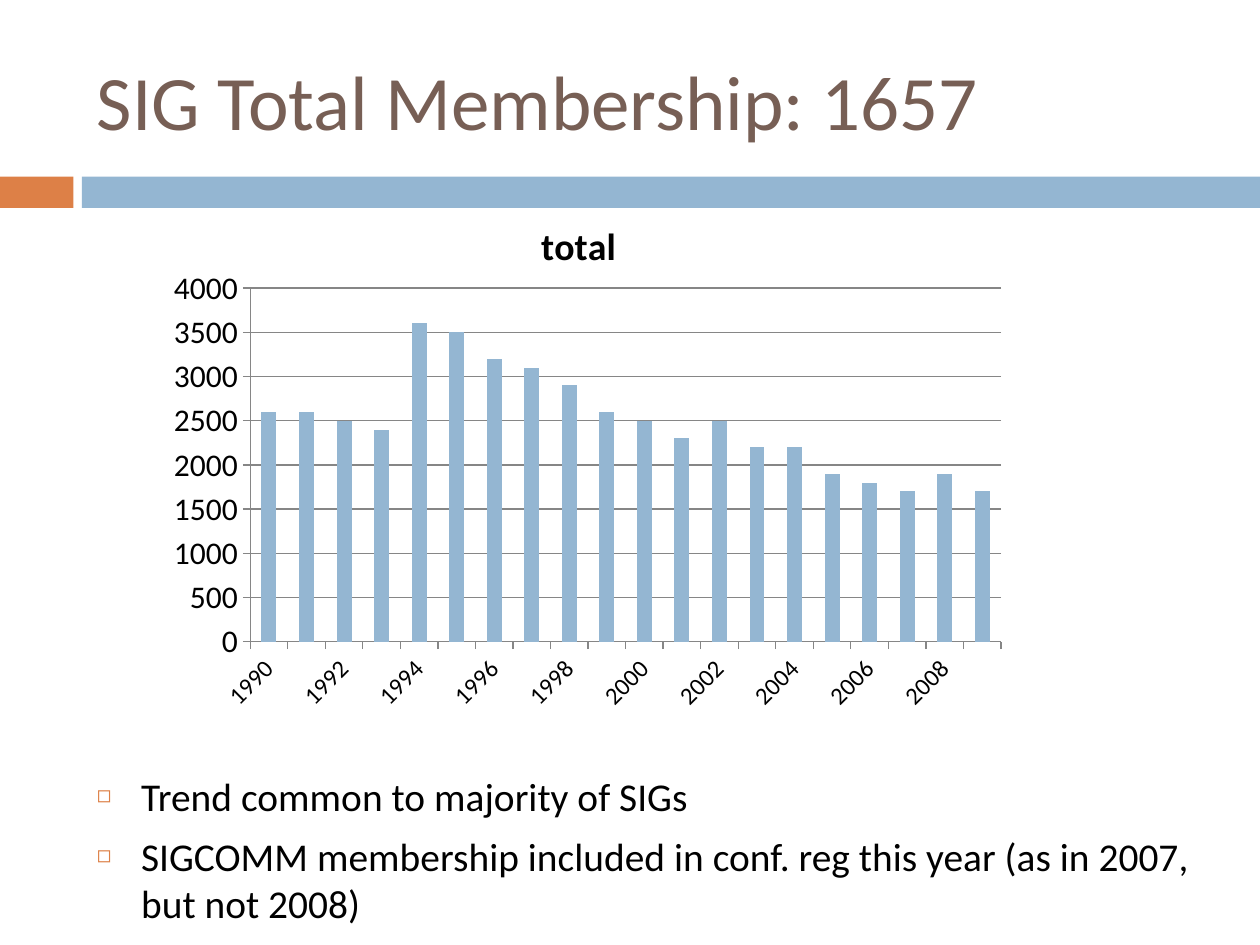
import pptx
import pptx.chart.data
import pptx.dml.color
import pptx.enum.chart
import pptx.enum.shapes
import pptx.enum.text
import pptx.oxml
import pptx.oxml.ns
import pptx.util
from dataclasses import dataclass

Cm, Pt = pptx.util.Cm, pptx.util.Pt

TITLE = "SIG Total Membership: 1657"
BULLETS = [
    "Trend common to majority of SIGs",
    "SIGCOMM membership included in conf. reg this year (as in 2007, but not 2008)",
]
SERIES = "total"
FIRST_YEAR = 1990
MEMBERS = [2600, 2600, 2500, 2400, 3600, 3500, 3200, 3100, 2900, 2600,
           2500, 2300, 2500, 2200, 2200, 1900, 1800, 1700, 1900, 1700]
PLOT = {"x": 0.151, "y": 0.152, "w": 0.798, "h": 0.565}


@dataclass
class Theme:
    font: str = "Calibri"
    title: str = "775F55"
    text: str = "000000"
    accent: str = "DD8047"
    bar: str = "94B6D2"
    grid: str = "868686"
    title_pt: float = 44
    body_pt: float = 22.5
    chart_title_pt: float = 21.6
    chart_pt: float = 18
    years_pt: float = 14


theme = Theme()
SLIDE_W, SLIDE_H = 25.4, 19.05
TEXT_LEFT, TEXT_W = 1.7, 22.66
BAND_TOP, BAND_H = 3.56, 0.63
TAB_W, BAND_LEFT = 1.48, 1.65


def rgb(value):
    return pptx.dml.color.RGBColor.from_string(value)


def xml(tag, content="", attrs=""):
    ns = pptx.oxml.ns.nsdecls("a", "c")
    return pptx.oxml.parse_xml(f"<{tag} {ns} {attrs}>{content}</{tag}>")


def style(font, size, color=theme.text, bold=False):
    font.name, font.size, font.bold = theme.font, Pt(size), bold
    font.color.rgb = rgb(color)


def write(p, text, size, color=theme.text, before=0, bullet=None):
    p.alignment = pptx.enum.text.PP_ALIGN.LEFT
    p.space_before = Pt(before)
    p.line_spacing = 1.0
    r = p.add_run()
    r.text = text
    style(r.font, size, color)
    if bullet:
        pPr = p._p.get_or_add_pPr()
        indent = Cm(0.89)
        pPr.set("marL", str(indent))
        pPr.set("indent", str(-indent))
        pPr.append(xml("a:buClr", f'<a:srgbClr val="{theme.accent}"/>'))
        pPr.append(xml("a:buSzPct", attrs='val="60000"'))
        pPr.append(xml("a:buChar", attrs=f'char="{bullet}"'))


def place(sp, left, top, width, height):
    sp.left, sp.top, sp.width, sp.height = map(Cm, (left, top, width, height))


prs = pptx.Presentation()
prs.slide_width, prs.slide_height = Cm(SLIDE_W), Cm(SLIDE_H)
s = prs.slides.add_slide(prs.slide_layouts[1])

for left, width, color in [(0, TAB_W, theme.accent),
                           (BAND_LEFT, SLIDE_W - BAND_LEFT, theme.bar)]:
    sp = s.shapes.add_shape(pptx.enum.shapes.MSO_SHAPE.RECTANGLE,
                            Cm(left), Cm(BAND_TOP), Cm(width), Cm(BAND_H))
    sp.shadow.inherit = False
    sp.fill.solid()
    sp.fill.fore_color.rgb = rgb(color)
    sp.line.fill.background()

title, body = s.shapes.title, s.placeholders[1]
place(title, TEXT_LEFT, 0.64, TEXT_W, 2.74)
place(body, TEXT_LEFT, 15.44, TEXT_W, 3.02)
for sp, anchor in [(title, pptx.enum.text.MSO_ANCHOR.MIDDLE),
                   (body, pptx.enum.text.MSO_ANCHOR.TOP)]:
    tf = sp.text_frame
    tf.word_wrap = True
    tf.auto_size = pptx.enum.text.MSO_AUTO_SIZE.NONE
    tf.vertical_anchor = anchor

write(title.text_frame.paragraphs[0], TITLE, theme.title_pt, theme.title)
tf = body.text_frame
for i, text in enumerate(BULLETS):
    p = tf.add_paragraph() if i else tf.paragraphs[0]
    write(p, text, theme.body_pt, before=7, bullet="\u25fb")

data = pptx.chart.data.CategoryChartData()
data.categories = [str(FIRST_YEAR + i) for i in range(len(MEMBERS))]
data.add_series(SERIES, MEMBERS)
chart = s.shapes.add_chart(pptx.enum.chart.XL_CHART_TYPE.COLUMN_STACKED,
                           Cm(2.18), Cm(3.89), Cm(18.97), Cm(12.62), data).chart
style(chart.font, theme.chart_pt)
chart.has_legend = False
chart.has_title = True
p = chart.chart_title.text_frame.paragraphs[0]
r = p.add_run()
r.text = SERIES
style(r.font, theme.chart_title_pt, bold=True)
chart.chart_title.include_in_layout = False

plot = chart.plots[0]
plot.gap_width, plot.overlap, plot.vary_by_categories = 150, 100, False
fill = plot.series[0].format.fill
fill.solid()
fill.fore_color.rgb = rgb(theme.bar)

years, counts = chart.category_axis, chart.value_axis
counts.minimum_scale, counts.maximum_scale, counts.major_unit = 0, 4000, 500
counts.has_major_gridlines = True
for axis, size in [(years, theme.years_pt), (counts, theme.chart_pt)]:
    axis.major_tick_mark = pptx.enum.chart.XL_TICK_MARK.OUTSIDE
    style(axis.tick_labels.font, size)
for line in (years.format.line, counts.format.line,
             counts.major_gridlines.format.line):
    line.color.rgb = rgb(theme.grid)
    line.width = Pt(0.75)

axis_xml = years._element
axis_xml.find(".//" + pptx.oxml.ns.qn("a:bodyPr")).set("rot", "-2700000")
axis_xml.find(pptx.oxml.ns.qn("c:noMultiLvlLbl")).addprevious(
    xml("c:tickLblSkip", attrs='val="2"'))

area = chart._chartSpace.find(pptx.oxml.ns.qn("c:chart"))
area.addnext(xml("c:spPr", "<a:noFill/><a:ln><a:noFill/></a:ln>"))
plot_area = area.find(pptx.oxml.ns.qn("c:plotArea"))
for old in plot_area.findall(pptx.oxml.ns.qn("c:layout")):
    plot_area.remove(old)
modes = '<c:layoutTarget val="inner"/><c:xMode val="edge"/><c:yMode val="edge"/>'
sizes = "".join(f'<c:{k} val="{v}"/>' for k, v in PLOT.items())
plot_area.insert(0, xml("c:layout", f"<c:manualLayout>{modes}{sizes}</c:manualLayout>"))

prs.save("out.pptx")
